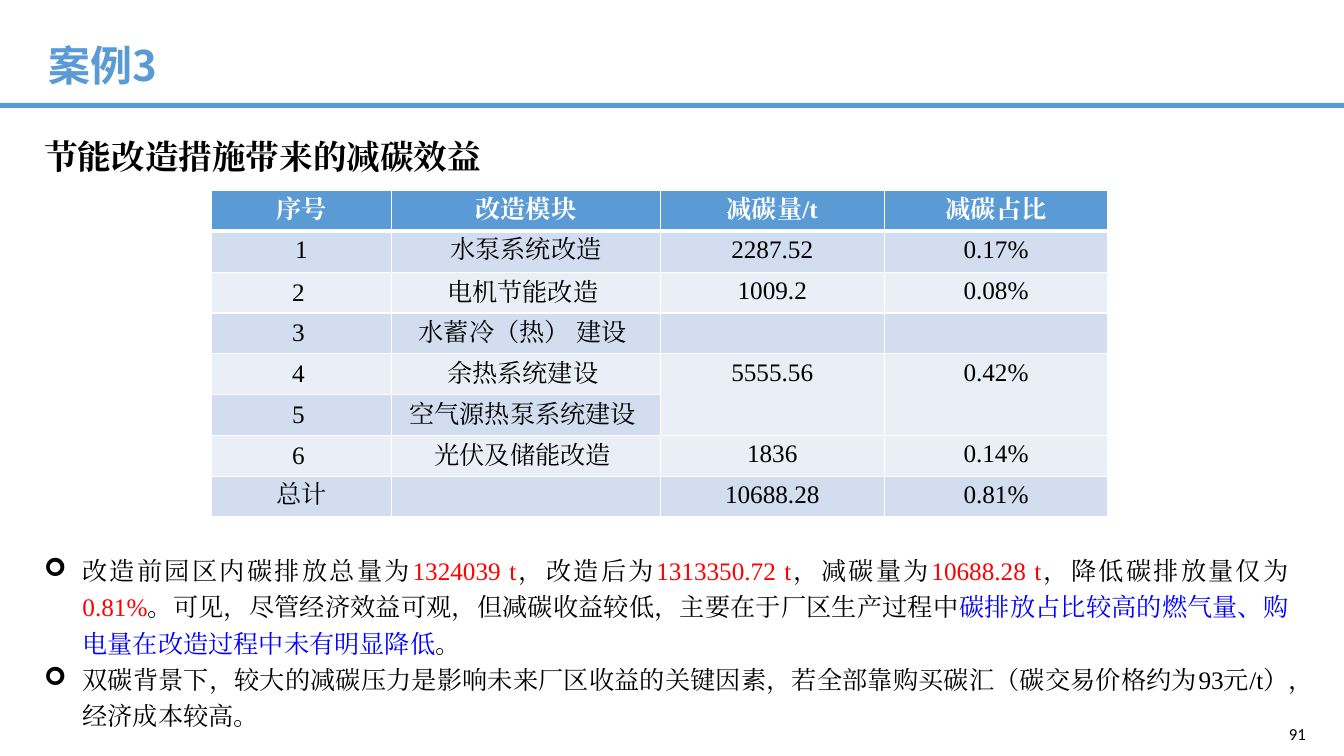
from lxml import etree
from pptx import Presentation
from pptx.dml.color import RGBColor
from pptx.enum.shapes import MSO_SHAPE
from pptx.enum.text import MSO_ANCHOR, PP_ALIGN
from pptx.oxml.ns import qn
from pptx.util import Inches, Pt

RECTANGLE = MSO_SHAPE.RECTANGLE
TOP, MIDDLE = MSO_ANCHOR.TOP, MSO_ANCHOR.MIDDLE
LEFT, CENTER, RIGHT, JUSTIFY = PP_ALIGN.LEFT, PP_ALIGN.CENTER, PP_ALIGN.RIGHT, PP_ALIGN.JUSTIFY

SERIF, SANS = "Times New Roman", "Noto Sans CJK SC"
BLUE, WHITE, BLACK = "5B9BD5", "FFFFFF", "000000"
RED, DEEP_BLUE = "FF0000", "0000FF"
BANDS = ["D2DEEF", "EAEFF7"]

COLUMN_WIDTHS = [1.78, 2.67, 2.22, 2.22]
MEASURES = [
    ["序号", "改造模块", "减碳量/t", "减碳占比"],
    ["1", "水泵系统改造", "2287.52", "0.17%"],
    ["2 ", "电机节能改造 ", "1009.2", "0.08%"],
    ["3 ", "水蓄冷（热） 建设 ", "", ""],
    ["4 ", "余热系统建设 ", "5555.56", "0.42%"],
    ["5 ", "空气源热泵系统建设 ", "", ""],
    ["6 ", "光伏及储能改造 ", "1836", "0.14%"],
    ["总计", "", "10688.28", "0.81%"],
]
MERGED_ROW = 4
CONCLUSIONS = [
    [("改造前园区内碳排放总量为", BLACK), ("1324039 t", RED), ("，改造后为", BLACK),
     ("1313350.72 t", RED), ("，减碳量为", BLACK), ("10688.28 t", RED),
     ("，降低碳排放量仅为", BLACK), ("0.81%", RED),
     ("。可见，尽管经济效益可观，但减碳收益较低，主要在于厂区生产过程中", BLACK),
     ("碳排放占比较高的燃气量、购电量在改造过程中未有明显降低", DEEP_BLUE), ("。", BLACK)],
    [("双碳背景下，较大的减碳压力是影响未来厂区收益的关键因素，"
      "若全部靠购买碳汇（碳交易价格约为93元/t），经济成本较高。", BLACK)],
]


def rgb(color):
    return RGBColor.from_string(color)


def add_run(paragraph, text, size=18, font=SERIF, color=BLACK, bold=False):
    run = paragraph.add_run()
    run.text = text
    run.font.size = Pt(size)
    run.font.name = font
    run.font.bold = bold
    run.font.color.rgb = rgb(color)
    east_asian = etree.SubElement(run.font._element, qn("a:ea"))
    east_asian.set("typeface", font)


def add_text_frame(slide, box, margins=(0.1, 0.05, 0.1, 0.05), anchor=TOP):
    frame = slide.shapes.add_textbox(*map(Inches, box)).text_frame
    frame.word_wrap = True
    frame.vertical_anchor = anchor
    frame.margin_left, frame.margin_top, frame.margin_right, frame.margin_bottom = map(Inches, margins)
    return frame


def add_text(slide, box, text, align=LEFT, spacing=1.0, margins=(0.1, 0.05, 0.1, 0.05),
             anchor=TOP, **style):
    paragraph = add_text_frame(slide, box, margins, anchor).paragraphs[0]
    paragraph.alignment = align
    paragraph.line_spacing = spacing
    add_run(paragraph, text, **style)


def add_header(slide, left, top, width):
    add_text(slide, (left + 0.34, top + 0.05, 10.94, 0.9), "案例3", spacing=1.4,
             margins=(0.14, 0.14, 0.06, 0.14), size=30, font=SANS, color=BLUE, bold=True)
    rule = slide.shapes.add_shape(RECTANGLE, *map(Inches, (left, top + 1.02, width, 0.05)))
    rule.shadow.inherit = False
    rule.fill.solid()
    rule.fill.fore_color.rgb = rgb(BLUE)
    rule.line.fill.background()


def set_borders(cell, bottom_width):
    properties = cell._tc.get_or_add_tcPr()
    widths = {"a:lnL": 1, "a:lnR": 1, "a:lnT": 1, "a:lnB": bottom_width}
    for position, (tag, width) in enumerate(widths.items()):
        line = etree.Element(qn(tag), w=str(Pt(width)))
        fill = etree.SubElement(line, qn("a:solidFill"))
        etree.SubElement(fill, qn("a:srgbClr"), val=WHITE)
        properties.insert(position, line)


def add_measures_table(slide, left, top, width, height):
    row_count, column_count = len(MEASURES), len(COLUMN_WIDTHS)
    table = slide.shapes.add_table(row_count, column_count,
                                   *map(Inches, (left, top, width, height))).table
    for column, column_width in zip(table.columns, COLUMN_WIDTHS):
        column.width = Inches(column_width)
    for row_index, texts in enumerate(MEASURES):
        header = row_index == 0
        table.rows[row_index].height = Inches(height / row_count)
        for column_index, text in enumerate(texts):
            cell = table.cell(row_index, column_index)
            cell.fill.solid()
            cell.fill.fore_color.rgb = rgb(BLUE if header else BANDS[(row_index - 1) % 2])
            cell.vertical_anchor = MIDDLE if 2 <= row_index <= 6 and column_index < 2 else TOP
            set_borders(cell, 3 if header else 1)
            paragraph = cell.text_frame.paragraphs[0]
            paragraph.alignment = CENTER
            if text:
                add_run(paragraph, text, color=WHITE if header else BLACK, bold=header)
    for column_index in (2, 3):
        table.cell(MERGED_ROW, column_index).merge(table.cell(MERGED_ROW + 1, column_index))


def add_conclusions(slide, box):
    frame = add_text_frame(slide, box)
    for index, runs in enumerate(CONCLUSIONS):
        paragraph = frame.add_paragraph() if index else frame.paragraphs[0]
        paragraph.alignment = JUSTIFY
        paragraph.line_spacing = 1.2
        properties = paragraph._p.get_or_add_pPr()
        properties.set("marL", str(Inches(0.38)))
        properties.set("indent", str(Inches(-0.38)))
        etree.SubElement(properties, qn("a:buFont"), typeface="Wingdings")
        etree.SubElement(properties, qn("a:buChar"), char="➢")
        for text, color in runs:
            add_run(paragraph, text, color=color)


def build_case_slide(presentation):
    slide = presentation.slides.add_slide(presentation.slide_layouts[6])
    add_header(slide, 0, 0, 13.33)
    add_text(slide, (0.34, 1.22, 5.67, 0.54), "节能改造措施带来的减碳效益",
             align=JUSTIFY, spacing=1.2, size=24, bold=True)
    add_measures_table(slide, 2.1, 1.89, sum(COLUMN_WIDTHS), 3.24)
    add_conclusions(slide, (0.34, 5.4, 12.54, 1.89))
    add_text(slide, (10.05, 7.06, 3, 0.44), "91", align=RIGHT, anchor=MIDDLE,
             size=12, font="Calibri")


def main():
    presentation = Presentation()
    presentation.slide_width = Inches(13.33)
    presentation.slide_height = Inches(7.5)
    build_case_slide(presentation)
    presentation.save("out.pptx")


if __name__ == "__main__":
    main()
